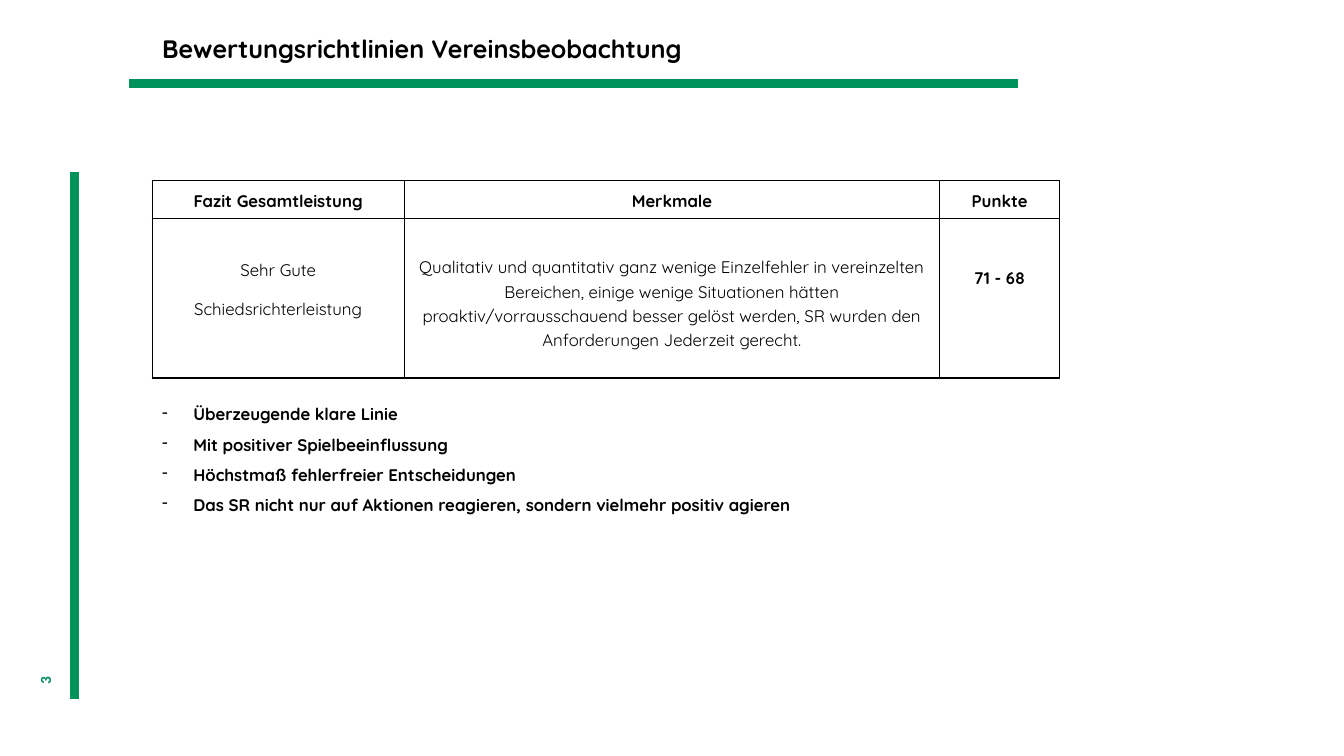
from dataclasses import dataclass

from lxml import etree
from pptx import Presentation
from pptx.dml.color import RGBColor
from pptx.enum.shapes import MSO_CONNECTOR
from pptx.enum.text import MSO_ANCHOR, PP_ALIGN
from pptx.oxml.ns import qn
from pptx.slide import Slide
from pptx.text.text import TextFrame
from pptx.util import Inches, Pt

GREEN = RGBColor(0x00, 0x92, 0x5B)
BLACK = RGBColor(0x00, 0x00, 0x00)
LEFT, CENTER, RIGHT = PP_ALIGN.LEFT, PP_ALIGN.CENTER, PP_ALIGN.RIGHT
TOP, MIDDLE = MSO_ANCHOR.TOP, MSO_ANCHOR.MIDDLE
STRAIGHT = MSO_CONNECTOR.STRAIGHT


@dataclass
class Bar:
    x1: float
    y1: float
    x2: float
    y2: float


@dataclass
class Cell:
    lines: list[str]
    bold: bool = False
    spacing: float = 1.15
    top: float = 0


BARS = [Bar(0.74, 1.71, 0.74, 6.93), Bar(1.28, 0.83, 10.1, 0.83)]
COLUMNS = [2.5, 5.31, 1.19]
ROWS = [0.38, 1.58]
CELLS = [
    [Cell([head], True, 1.5) for head in ("Fazit Gesamtleistung", "Merkmale", "Punkte")],
    [
        Cell(["Sehr Gute", "Schiedsrichterleistung"], top=0.38),
        Cell(["Qualitativ und quantitativ ganz wenige Einzelfehler in vereinzelten "
              "Bereichen, einige wenige Situationen hätten proaktiv/vorrausschauend "
              "besser gelöst werden, SR wurden den Anforderungen Jederzeit gerecht."],
             top=0.35),
        Cell(["71 - 68"], True, 1.5, 0.38),
    ],
]
CRITERIA = [
    "Überzeugende klare Linie",
    "Mit positiver Spielbeeinflussung",
    "Höchstmaß fehlerfreier Entscheidungen",
    "Das SR nicht nur auf Aktionen reagieren, sondern vielmehr positiv agieren",
]


def write(tf: TextFrame, lines: list[str], *, size: float = 12, font: str = "Quicksand",
          color: RGBColor = BLACK, bold: bool = True, align: PP_ALIGN = LEFT,
          spacing: float = 1, after: float = 0, bullet: str = "") -> None:
    tf.word_wrap = True
    for i, line in enumerate(lines):
        p = tf.paragraphs[0] if i == 0 else tf.add_paragraph()
        p.alignment, p.line_spacing, p.space_after = align, spacing, Pt(after)
        if bullet:
            pPr = p._p.get_or_add_pPr()
            pPr.set("marL", str(Inches(0.31)))
            pPr.set("indent", str(-Inches(0.31)))
            etree.SubElement(pPr, qn("a:buChar")).set("char", bullet)
        r = p.add_run()
        r.text = line
        r.font.size, r.font.name, r.font.bold = Pt(size), font, bold
        r.font.color.rgb = color


def add_box(s: Slide, x: float, y: float, w: float, h: float,
            anchor: MSO_ANCHOR = TOP, rotation: float = 0) -> TextFrame:
    sp = s.shapes.add_textbox(Inches(x), Inches(y), Inches(w), Inches(h))
    sp.rotation = rotation
    sp.text_frame.vertical_anchor = anchor
    return sp.text_frame


def add_bar(s: Slide, bar: Bar) -> None:
    sp = s.shapes.add_connector(STRAIGHT, Inches(bar.x1), Inches(bar.y1),
                                Inches(bar.x2), Inches(bar.y2))
    sp.line.color.rgb, sp.line.width = GREEN, Pt(6)
    etree.SubElement(sp._element.spPr, qn("a:effectLst"))


def add_borders(cell) -> None:
    tcPr = cell._tc.get_or_add_tcPr()
    for i, side in enumerate(("lnL", "lnR", "lnT", "lnB")):
        ln = etree.Element(qn(f"a:{side}"), w=str(Pt(1)))
        fill = etree.SubElement(ln, qn("a:solidFill"))
        etree.SubElement(fill, qn("a:srgbClr")).set("val", str(BLACK))
        tcPr.insert(i, ln)


def add_rating_table(s: Slide) -> None:
    frame = s.shapes.add_table(len(ROWS), len(COLUMNS), Inches(1.51), Inches(1.79),
                               Inches(sum(COLUMNS)), Inches(sum(ROWS)))
    table = frame.table
    table.first_row = table.horz_banding = False
    for column, width in zip(table.columns, COLUMNS):
        column.width = Inches(width)
    for row, height, contents in zip(table.rows, ROWS, CELLS):
        row.height = Inches(height)
        for cell, content in zip(row.cells, contents):
            cell.margin_left = cell.margin_right = Inches(0.07)
            cell.margin_top, cell.margin_bottom = Inches(content.top), 0
            cell.fill.background()
            add_borders(cell)
            write(cell.text_frame, content.lines, bold=content.bold, align=CENTER,
                  spacing=content.spacing, after=10)


def main() -> None:
    prs = Presentation()
    prs.slide_width, prs.slide_height = Inches(13.33), Inches(7.5)
    s = prs.slides.add_slide(prs.slide_layouts[6])

    # Green bars and page number
    for bar in BARS:
        add_bar(s, bar)
    write(add_box(s, 0.2, 6.66, 0.49, 0.4, MIDDLE, 270), ["3"],
          size=11, font="Calibri", color=GREEN, align=RIGHT)

    # Title
    write(add_box(s, 1.51, 0.3, 8.66, 0.39, MIDDLE),
          ["Bewertungsrichtlinien Vereinsbeobachtung"], size=18, spacing=0.9)

    # Rating table and criteria
    add_rating_table(s)
    write(add_box(s, 1.51, 3.86, 9.45, 1.27), CRITERIA, spacing=1.5, bullet="-")

    prs.save("out.pptx")


if __name__ == "__main__":
    main()
